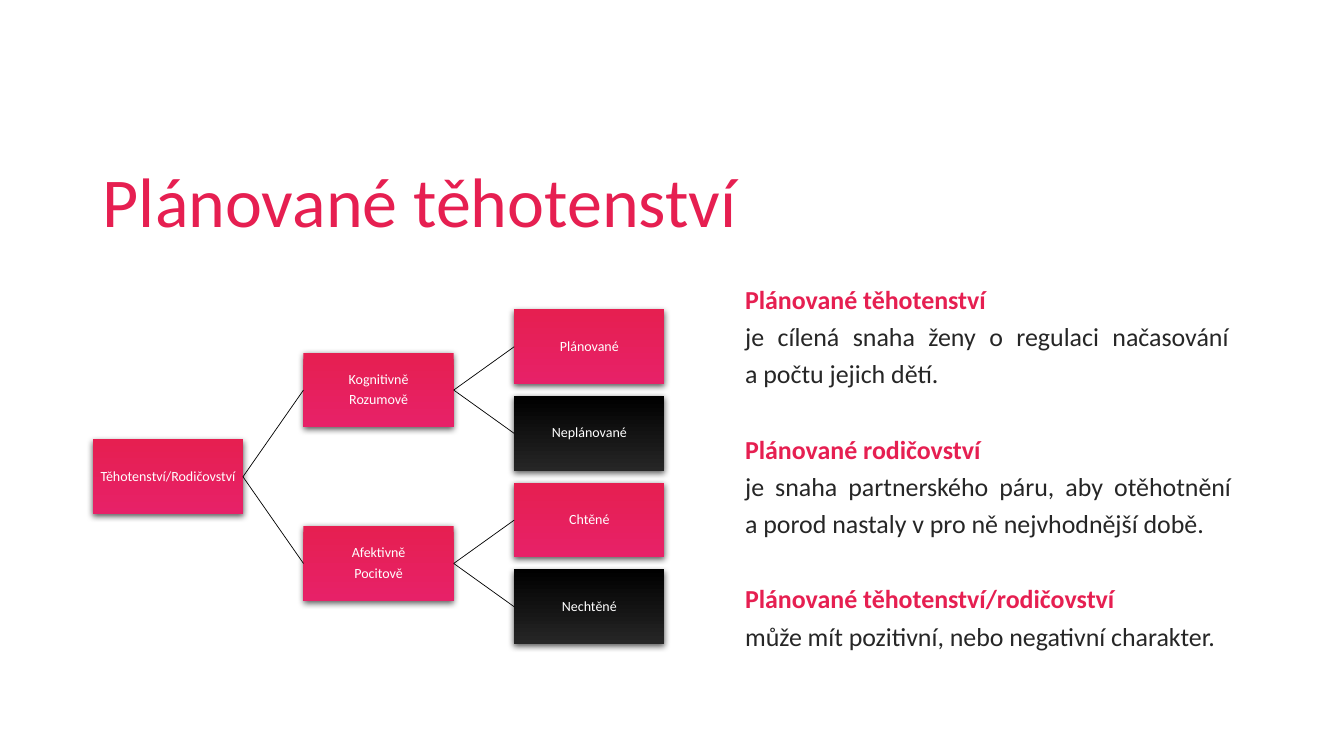
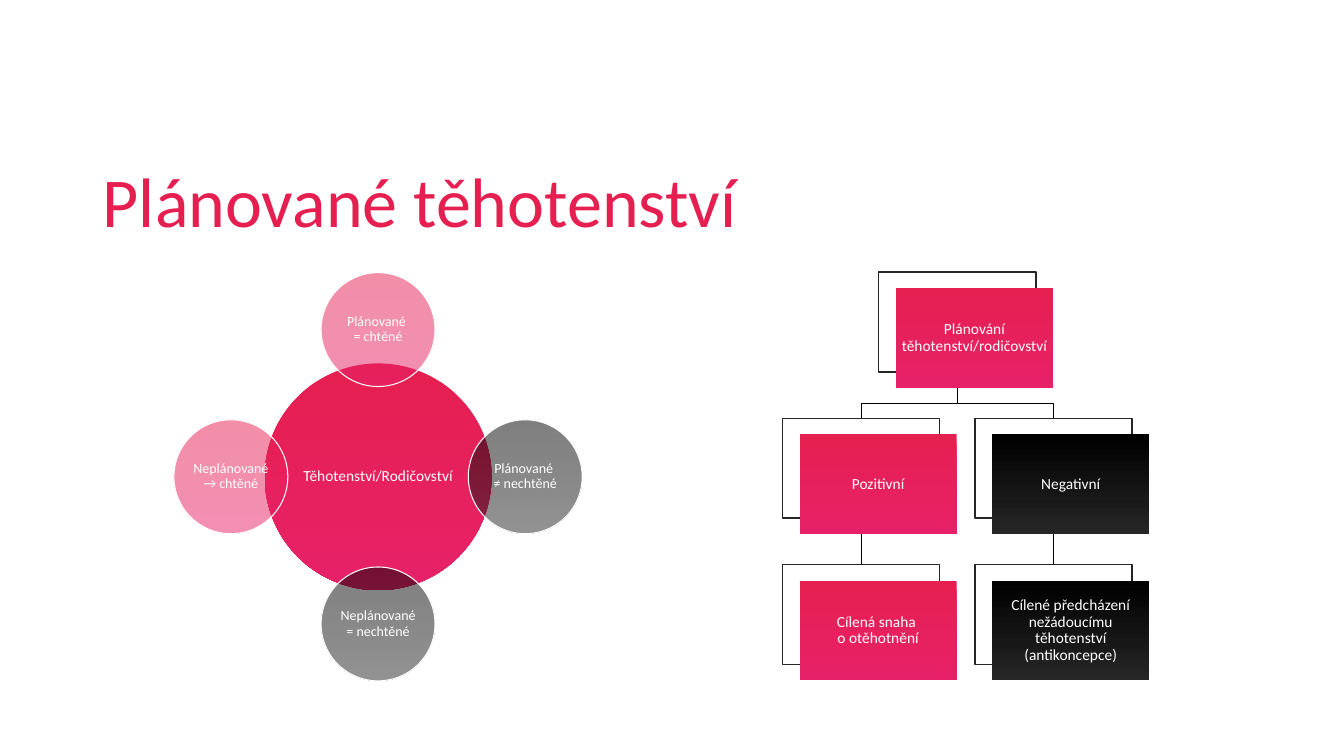
from lxml.etree import SubElement
from pptx import Presentation
from pptx.dml.color import RGBColor
from pptx.enum.shapes import MSO_CONNECTOR, MSO_SHAPE
from pptx.enum.text import MSO_ANCHOR, MSO_AUTO_SIZE, PP_ALIGN
from pptx.oxml.ns import qn
from pptx.util import Inches, Pt

FONT = "Calibri"
RED = RGBColor(0xE6, 0x1F, 0x51)
PINK = RGBColor(0xE7, 0x21, 0x68)
BLACK = RGBColor(0, 0, 0)
GREY = RGBColor(0x26, 0x26, 0x26)
WHITE = RGBColor(255, 255, 255)
WARM = (RED, PINK)
DARK = (BLACK, GREY)

HEADING = "Plánované těhotenství"
TOPIC = "Těhotenství/Rodičovství"
TERMS = [
    ("Plánované těhotenství",
     "je cílená snaha ženy o regulaci načasování \na počtu jejich dětí."),
    ("Plánované rodičovství",
     "je snaha partnerského páru, aby otěhotnění \n"
     "a porod nastaly v pro ně nejvhodnější době."),
    ("Plánované těhotenství/rodičovství",
     "může mít pozitivní, nebo negativní charakter."),
]


def place(shape, left, top, width, height):
    shape.left, shape.top = Inches(left), Inches(top)
    shape.width, shape.height = Inches(width), Inches(height)


def write(para, text, size, color, bold=False):
    """Add the text as runs, with a line break at each newline."""
    for i, part in enumerate(text.split("\n")):
        if i:
            para.add_line_break()
        run = para.add_run()
        run.text = part
        font = run.font
        font.name, font.size, font.bold = FONT, Pt(size), bold
        font.color.rgb = color


def add_page(deck, layout):
    slide = deck.slides.add_slide(deck.slide_layouts[layout])
    title = slide.shapes.title
    place(title, 0.92, 1.56, 11.5, 0.94)
    frame = title.text_frame
    frame.auto_size = MSO_AUTO_SIZE.NONE
    frame.vertical_anchor = MSO_ANCHOR.MIDDLE
    para = frame.paragraphs[0]
    para.alignment = PP_ALIGN.LEFT
    para.line_spacing = 0.9
    write(para, HEADING, 50, RED)
    return slide


def fill_body(body):
    place(body, 7.29, 2.7, 5.13, 4.06)
    frame = body.text_frame
    frame.auto_size = MSO_AUTO_SIZE.NONE
    lines = [(text, i == 0) for term in TERMS for i, text in enumerate(term)]
    for i, (text, head) in enumerate(lines):
        para = frame.add_paragraph() if i else frame.paragraphs[0]
        props = para._p.get_or_add_pPr()
        props.set("marL", "0")
        props.set("indent", "0")
        SubElement(props, qn("a:buNone"))
        para.alignment = PP_ALIGN.JUSTIFY
        para.line_spacing = 1.2
        para.space_before = Pt(27 if head and i else 0)
        write(para, text, 18.5, RED if head else GREY, head)


def add_shape(slide, kind, at):
    shape = slide.shapes.add_shape(kind, *map(Inches, at))
    shape.shadow.inherit = False
    shape.line.fill.background()
    return shape


def add_node(slide, kind, at, text, tones, size, inset=0.01, alpha=None):
    """Add a shape with a downward gradient and centred white lines."""
    shape = add_shape(slide, kind, at)
    shape.fill.gradient()
    shape.fill.gradient_angle = 270
    for stop, tone in zip(shape.fill.gradient_stops, tones):
        stop.color.rgb = tone
    if alpha:
        for color in shape.element.spPr.iter(qn("a:srgbClr")):
            SubElement(color, qn("a:alpha"), val=str(alpha * 1000))
    frame = shape.text_frame
    frame.word_wrap = True
    frame.vertical_anchor = MSO_ANCHOR.MIDDLE
    frame.margin_left = frame.margin_right = Inches(inset)
    frame.margin_top = frame.margin_bottom = Inches(inset)
    texts = [text] if isinstance(text, str) else text
    for i, line in enumerate(texts):
        para = frame.add_paragraph() if i else frame.paragraphs[0]
        para.alignment = PP_ALIGN.CENTER
        para.line_spacing = 0.9
        if i:
            para.space_before = Pt(0.35 * size)
        write(para, line, size, WHITE)
    return shape


def cast_shadow(shape):
    effects = shape.element.spPr.find(qn("a:effectLst"))
    outer = SubElement(effects, qn("a:outerShdw"), blurRad=str(Pt(4.5)),
                       dist=str(Pt(1.5)), dir="5400000", rotWithShape="0")
    color = SubElement(outer, qn("a:srgbClr"), val=str(BLACK))
    SubElement(color, qn("a:alpha"), val="63000")


def style_line(line):
    line.color.rgb = BLACK
    line.width = Pt(0.5)


def join(slide, start, out, end, into):
    link = slide.shapes.add_connector(MSO_CONNECTOR.STRAIGHT, 0, 0, 0, 0)
    link.begin_connect(start, out)
    link.end_connect(end, into)
    style_line(link.line)
    SubElement(link.element.spPr, qn("a:effectLst"))


def add_tree(slide):
    """Draw the topic, its two views and their four outcomes."""
    def node(col, row, text, tones=WARM):
        at = (0.92 + 2.09 * col, 3.07 + 0.86 * row, 1.49, 0.74)
        shape = add_node(slide, MSO_SHAPE.RECTANGLE, at, text, tones, 10)
        cast_shadow(shape)
        return shape

    views = [(("Kognitivně", "Rozumově"), "Plánované", "Neplánované"),
             (("Afektivně", "Pocitově"), "Chtěné", "Nechtěné")]
    root = node(0, 1.5, TOPIC)
    for i, (view, good, bad) in enumerate(views):
        branch = node(1, 2 * i + 0.5, view)
        join(slide, root, 3, branch, 1)
        for leaf in (node(2, 2 * i, good), node(2, 2 * i + 1, bad, DARK)):
            join(slide, branch, 3, leaf, 1)


def add_orbit(slide):
    """Draw the topic disc with four see-through discs around it."""
    def disc(dx, dy, width, text, tones, size, alpha=None):
        at = (3.75 + dx - width / 2, 4.73 + dy - width / 2, width, width)
        return add_node(slide, MSO_SHAPE.OVAL, at, text, tones, size,
                        alpha=alpha)

    disc(0, 0, 2.25, TOPIC, WARM, 11)
    moons = [(0, -1, "Plánované \n= chtěné", WARM),
             (1, 0, "Plánované \n≠ nechtěné", DARK),
             (0, 1, "Neplánované = nechtěné", DARK),
             (-1, 0, "Neplánované → chtěné", WARM)]
    for x, y, text, tones in moons:
        moon = disc(1.46 * x, 1.46 * y, 1.13, text, tones, 10, 50)
        moon.line.color.rgb = WHITE
        moon.line.width = Pt(0.75)


def add_elbow(slide, upper, lower):
    """Lead a line from the foot of one frame to the top of another."""
    start = upper.left + upper.width // 2
    end = lower.left + lower.width // 2
    foot = upper.top + upper.height
    bend = lower.top - Inches(0.15)
    path = slide.shapes.build_freeform(start, foot)
    path.add_line_segments([(start, bend), (end, bend), (end, lower.top)],
                           close=False)
    elbow = path.convert_to_shape()
    elbow.shadow.inherit = False
    elbow.fill.background()
    style_line(elbow.line)


def add_chart_tree(slide):
    """Draw the chart of cards, each in front of an outlined frame."""
    cards = [(0.5, 0, "Plánování těhotenství/rodičovství", WARM),
             (0, 1, "Pozitivní", WARM),
             (0, 2, "Cílená snaha \no otěhotnění", WARM),
             (1, 1, "Negativní", DARK),
             (1, 2, "Cílené předcházení nežádoucímu těhotenství "
                    "(antikoncepce)", DARK)]
    width, height = 1.56, 0.99
    spots = [(7.76 + 1.91 * col, 2.7 + 1.45 * row) for col, row, *_ in cards]
    frames = []
    for left, top in spots:
        frame = add_shape(slide, MSO_SHAPE.RECTANGLE,
                          (left, top, width, height))
        frame.fill.solid()
        frame.fill.fore_color.rgb = WHITE
        frame.line.color.rgb = GREY
        frame.line.width = Pt(1)
        frames.append(frame)
    root, *rest = frames
    for upper, lower in zip(rest[::2], rest[1::2]):
        add_elbow(slide, root, upper)
        join(slide, upper, 2, lower, 0)
    for (left, top), (_, _, text, tones) in zip(spots, cards):
        at = (left + 0.17, top + 0.16, width, height)
        add_node(slide, MSO_SHAPE.RECTANGLE, at, text, tones, 11, 0.05)


def main():
    deck = Presentation()
    deck.slide_width, deck.slide_height = Inches(13.33), Inches(7.5)
    first = add_page(deck, 1)
    fill_body(first.placeholders[1])
    add_tree(first)
    second = add_page(deck, 5)
    add_orbit(second)
    add_chart_tree(second)
    deck.save("out.pptx")


if __name__ == "__main__":
    main()
